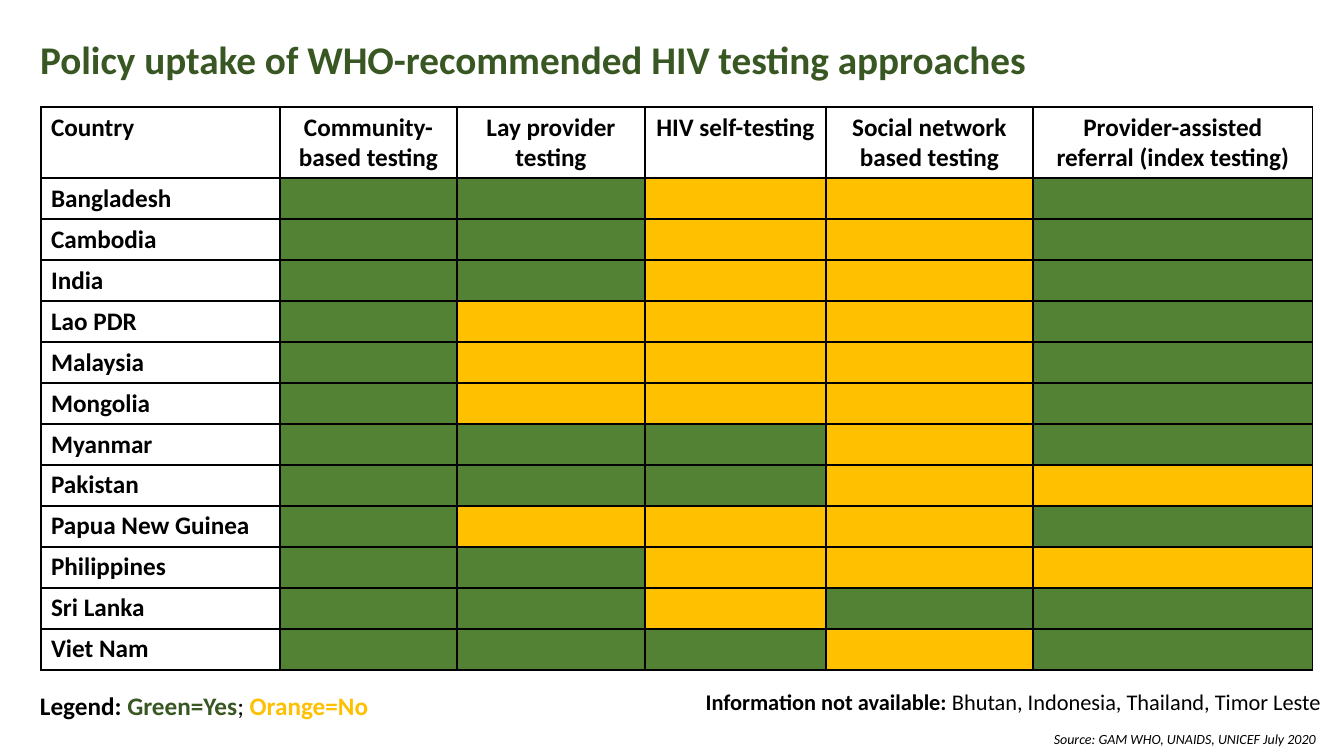
"""Build the HIV testing policy uptake slide."""
from dataclasses import dataclass

from lxml.etree import SubElement
from pptx import Presentation
from pptx.dml.color import RGBColor
from pptx.enum.text import MSO_ANCHOR as Anchor, MSO_AUTO_SIZE as AutoSize, PP_ALIGN as Align
from pptx.oxml.ns import qn
from pptx.util import Pt


@dataclass(frozen=True)
class Theme:
    font: str = "Calibri"
    black: str = "000000"
    heading: str = "385723"
    yes: str = "548235"
    no: str = "FFC000"
    title: int = 28
    body: int = 18
    note: int = 16
    source: int = 10


THEME = Theme()
EMU_PER_PX = 914400 / 100.8
SLIDE = (1344, 756)

TITLE = "Policy uptake of WHO-recommended HIV testing approaches"
TITLE_BOX = (30, 30, 1013, 57)

APPROACHES = [
    "Country",
    "Community-based testing",
    "Lay provider testing",
    "HIV self-testing",
    "Social network based testing",
    "Provider-assisted referral (index testing)",
]
UPTAKE = {
    "Bangladesh": "YYNNY",
    "Cambodia": "YYNNY",
    "India": "YYNNY",
    "Lao PDR": "YNNNY",
    "Malaysia": "YNNNY",
    "Mongolia": "YNNNY",
    "Myanmar": "YYYNY",
    "Pakistan": "YYYNN",
    "Papua New Guinea": "YNNNY",
    "Philippines": "YYNNN",
    "Sri Lanka": "YYNYY",
    "Viet Nam": "YYYNY",
}
TABLE_ORIGIN = (41, 107)
COLUMN_WIDTHS = (239, 177, 188, 181, 207, 280)
HEADER_HEIGHT, COUNTRY_HEIGHT = 71, 41
ANSWER_FILLS = {"Y": THEME.yes, "N": THEME.no}

FOOTNOTES = [
    ((30, 685, 357, 40), Align.LEFT, False, THEME.body, [
        ("Legend: ", {"bold": True}, THEME.black),
        ("Green=Yes", {"bold": True}, THEME.heading),
        ("; ", {"bold": False}, THEME.black),
        ("Orange=No", {"bold": True}, THEME.no),
    ]),
    ((578, 683, 753, 37), Align.RIGHT, True, THEME.note, [
        ("Information not available: ", {"bold": True}, THEME.black),
        ("Bhutan, Indonesia, Thailand, Timor Leste", {"bold": False}, THEME.black),
    ]),
    ((1044, 726, 289, 27), Align.LEFT, False, THEME.source, [
        ("Source: GAM WHO, UNAIDS, UNICEF July 2020", {"italic": True}, THEME.black),
    ]),
]


def px(length):
    return round(length * EMU_PER_PX)


def set_all(target, values):
    for name, value in values.items():
        setattr(target, name, value)


def write(frame, phrases, size, align):
    paragraph = frame.paragraphs[0]
    paragraph.alignment = align
    for words, style, color in phrases:
        run = paragraph.add_run()
        run.text = words
        set_all(run.font, {"name": THEME.font, "size": Pt(size), **style})
        run.font.color.rgb = RGBColor.from_string(color)


def outline(cell):
    properties = cell._tc.get_or_add_tcPr()
    for side in ("a:lnL", "a:lnR", "a:lnT", "a:lnB"):
        line = SubElement(properties, qn(side), w=str(Pt(1)))
        fill = SubElement(line, qn("a:solidFill"))
        SubElement(fill, qn("a:srgbClr"), val=THEME.black)


def add_title(slide):
    title = slide.shapes.title
    set_all(title, dict(zip(("left", "top", "width", "height"), map(px, TITLE_BOX))))
    set_all(title.text_frame, {
        "word_wrap": True, "auto_size": AutoSize.SHAPE_TO_FIT_TEXT, "vertical_anchor": Anchor.TOP,
    })
    write(title.text_frame, [(TITLE, {"bold": True}, THEME.heading)], THEME.title, Align.LEFT)


def add_uptake(slide):
    heights = [HEADER_HEIGHT] + [COUNTRY_HEIGHT] * len(UPTAKE)
    extent = (*TABLE_ORIGIN, sum(COLUMN_WIDTHS), sum(heights))
    table = slide.shapes.add_table(len(heights), len(COLUMN_WIDTHS), *map(px, extent)).table
    set_all(table, {"first_row": False, "horz_banding": False})
    for column, width in zip(table.columns, COLUMN_WIDTHS):
        column.width = px(width)
    for row, height in zip(table.rows, heights):
        row.height = px(height)

    entries = [APPROACHES] + [[country, *answers] for country, answers in UPTAKE.items()]
    for row, values in zip(table.rows, entries):
        for position, (cell, value) in enumerate(zip(row.cells, values)):
            outline(cell)
            if value in ANSWER_FILLS:
                cell.fill.solid()
                cell.fill.fore_color.rgb = RGBColor.from_string(ANSWER_FILLS[value])
            else:
                cell.fill.background()
                align = Align.CENTER if position else Align.LEFT
                write(cell.text_frame, [(value, {"bold": True}, THEME.black)], THEME.body, align)


def add_footnotes(slide):
    for box, align, wrap, size, phrases in FOOTNOTES:
        frame = slide.shapes.add_textbox(*map(px, box)).text_frame
        set_all(frame, {"word_wrap": wrap, "auto_size": AutoSize.SHAPE_TO_FIT_TEXT})
        write(frame, phrases, size, align)


def main():
    deck = Presentation()
    deck.slide_width, deck.slide_height = map(px, SLIDE)
    slide = deck.slides.add_slide(deck.slide_layouts[5])
    add_title(slide)
    add_uptake(slide)
    add_footnotes(slide)
    deck.save("out.pptx")


if __name__ == "__main__":
    main()
